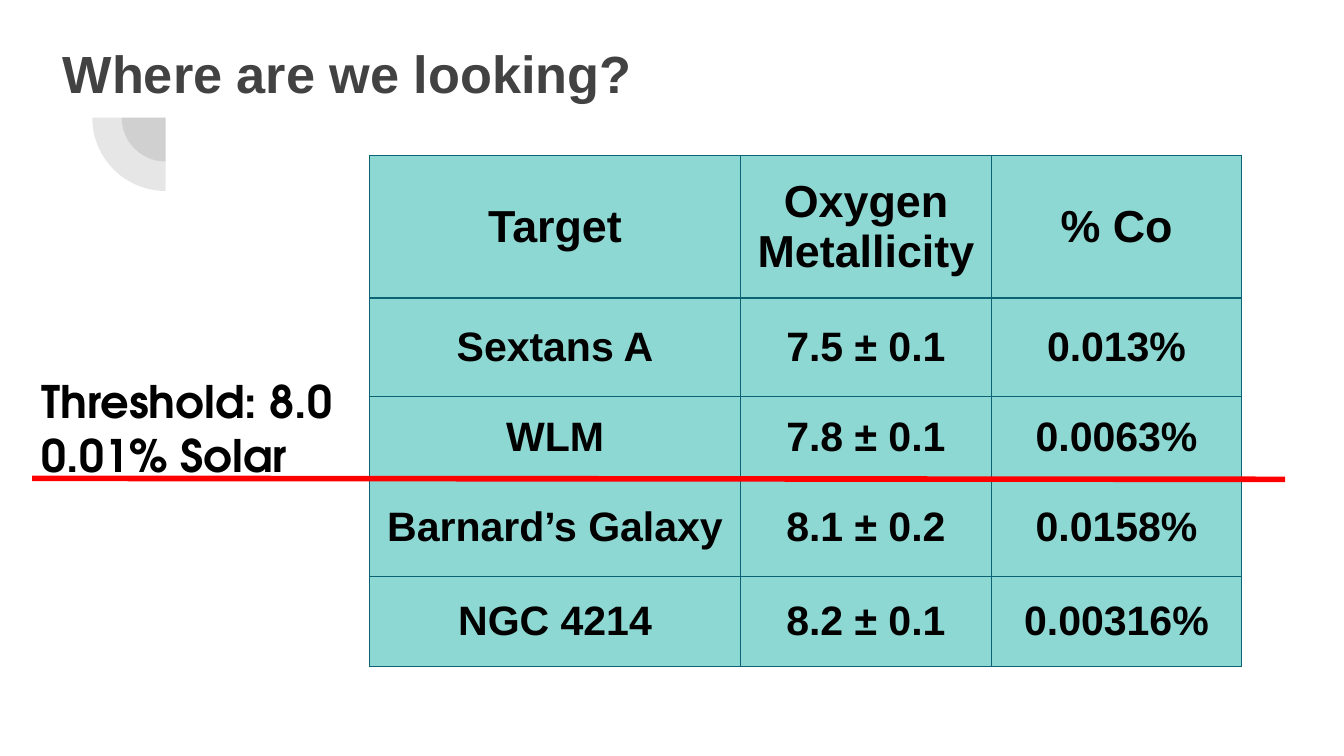
import pptx
import pptx.dml.color
import pptx.enum.shapes
import pptx.enum.text
import pptx.oxml
import pptx.oxml.ns
import pptx.util
from lxml import etree

Pt = pptx.util.Pt
PP_ALIGN = pptx.enum.text.PP_ALIGN
MSO_ANCHOR = pptx.enum.text.MSO_ANCHOR
qn = pptx.oxml.ns.qn


def rgb(value):
    return pptx.dml.color.RGBColor.from_string(value)


def write(tf, text, size, font="Arial", color="000000", align=PP_ALIGN.LEFT):
    """Put bold text in a text frame, one paragraph per line."""
    tf.word_wrap = True
    tf.margin_left = tf.margin_right = tf.margin_top = tf.margin_bottom = Pt(7.2)
    for i, line in enumerate(text.split("\n")):
        p = tf.paragraphs[0] if i == 0 else tf.add_paragraph()
        p.alignment = align
        r = p.add_run()
        r.text = line
        r.font.size = Pt(size)
        r.font.name = font
        r.font.bold = True
        r.font.color.rgb = rgb(color)


prs = pptx.Presentation()
prs.slide_width, prs.slide_height = Pt(720), Pt(405)
s = prs.slides.add_slide(prs.slide_layouts[6])

# Concentric translucent quarter circles
cx, cy = 88.7, 63
for radius in (23.5, 39.3):
    sp = s.shapes.add_shape(pptx.enum.shapes.MSO_SHAPE.PIE, Pt(cx - radius),
                            Pt(cy - radius), Pt(2 * radius), Pt(2 * radius))
    sp.rotation = 270
    sp.adjustments[0], sp.adjustments[1] = 108, 162
    sp.shadow.inherit = False
    sp.fill.solid()
    sp.fill.fore_color.rgb = rgb("424242")
    clr = sp.fill._xPr.find(".//" + qn("a:srgbClr"))
    etree.SubElement(clr, qn("a:alpha"), val="13000")
    sp.line.fill.background()

title = s.shapes.add_textbox(Pt(26.6), Pt(15.1), Pt(553.7), Pt(78.5))
write(title.text_frame, "Where are we looking?", 28, color="424242")

# Target table
rows = [
    ("Target", "Oxygen Metallicity", "% Co"),
    ("Sextans A", "7.5 ± 0.1", "0.013%"),
    ("WLM", "7.8 ± 0.1", "0.0063%"),
    ("Barnard’s Galaxy", "8.1 ± 0.2", "0.0158%"),
    ("NGC 4214", "8.2 ± 0.1", "0.00316%"),
]
widths = [198.7, 134.5, 134]
heights = [76.4, 52.6, 43.9, 52.6, 48.2]
table = s.shapes.add_table(len(rows), len(widths), Pt(198), Pt(83.3),
                           Pt(sum(widths)), Pt(sum(heights))).table
for column, width in zip(table.columns, widths):
    column.width = Pt(width)
for i, (row, height) in enumerate(zip(rows, heights)):
    table.rows[i].height = Pt(height)
    for j, text in enumerate(row):
        cell = table.cell(i, j)
        write(cell.text_frame, text, 24 if i == 0 else 22, align=PP_ALIGN.CENTER)
        cell.margin_left = cell.margin_right = Pt(7.2)
        cell.margin_top = cell.margin_bottom = Pt(7.2)
        cell.vertical_anchor = MSO_ANCHOR.MIDDLE
        tcPr = cell._tc.get_or_add_tcPr()
        for side in ("lnL", "lnR", "lnT", "lnB"):
            ln = etree.SubElement(tcPr, qn("a:" + side), w=str(Pt(0.75)))
            fill = etree.SubElement(ln, qn("a:solidFill"))
            etree.SubElement(fill, qn("a:srgbClr"), val="0B6374")
        cell.fill.solid()
        cell.fill.fore_color.rgb = rgb("8DD8D3")

# Metallicity threshold
line = s.shapes.add_connector(pptx.enum.shapes.MSO_CONNECTOR.STRAIGHT,
                              Pt(17.2), Pt(256.3), Pt(688.4), Pt(256.8))
line.line.color.rgb = rgb("FF0000")
line.line.width = Pt(3)
etree.SubElement(line._element.spPr, qn("a:effectLst"))

threshold = s.shapes.add_textbox(Pt(15.1), Pt(193), Pt(188.6), Pt(54))
write(threshold.text_frame, "Threshold: 8.0\n0.01% Solar", 24, font="TeX Gyre Adventor")

prs.save("out.pptx")
